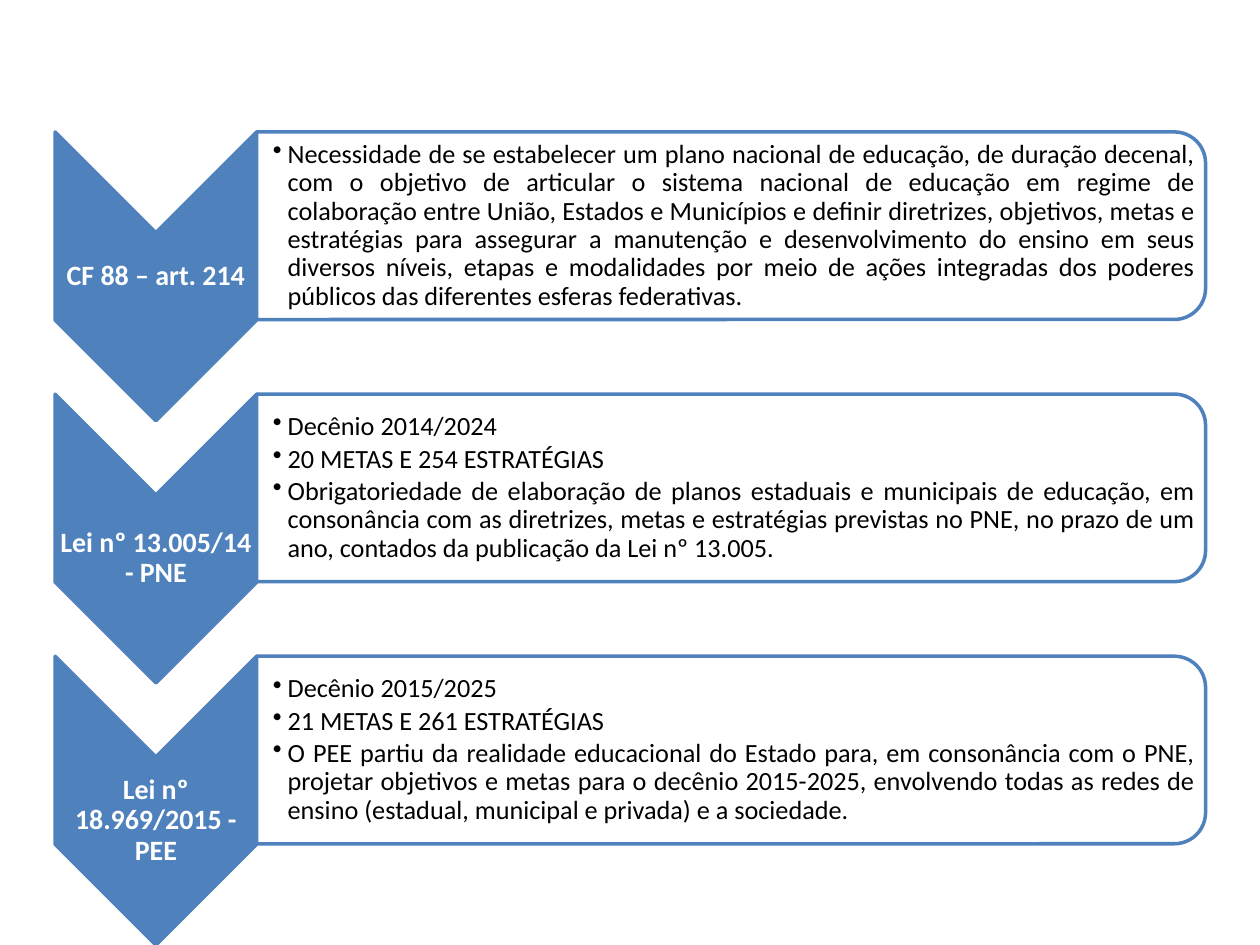
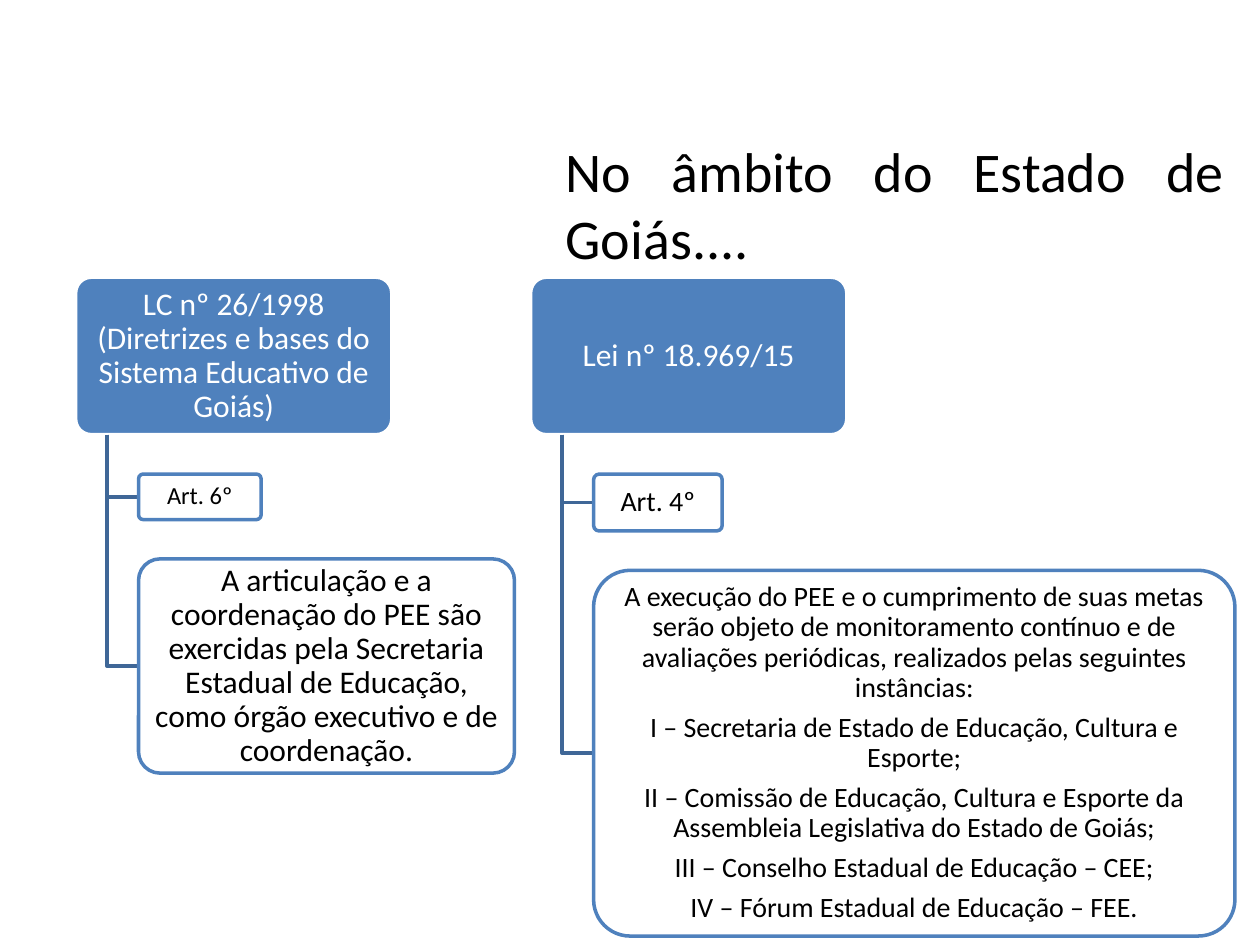
from dataclasses import dataclass

from lxml.etree import SubElement
from pptx import Presentation
from pptx.dml.color import RGBColor
from pptx.enum.shapes import MSO_SHAPE as Shape
from pptx.enum.text import MSO_ANCHOR as Anchor, MSO_AUTO_SIZE as AutoSize, PP_ALIGN as Align
from pptx.oxml.ns import qn
from pptx.util import Pt


@dataclass(frozen=True)
class Theme:
    font: str = "Calibri"
    blue: RGBColor = RGBColor(0x4F, 0x81, 0xBD)
    branch: RGBColor = RGBColor(0x3F, 0x67, 0x97)
    white: RGBColor = RGBColor(0xFF, 0xFF, 0xFF)
    black: RGBColor = RGBColor(0, 0, 0)
    line: float = 2
    title: float = 32
    card: float = 18
    label: float = 16
    bullet: float = 15
    small: float = 14


class Deck:
    TITLE_ONLY, BLANK = 5, 6

    def __init__(self, theme):
        self.theme = theme
        self.prs = Presentation()
        self.prs.slide_width, self.prs.slide_height = Pt(720), Pt(540)
        self.slide = None

    def new_slide(self, layout):
        self.slide = self.prs.slides.add_slide(self.prs.slide_layouts[layout])

    def title(self, text, x, y, w, h):
        title = self.slide.shapes.title
        title.left, title.top, title.width, title.height = Pt(x), Pt(y), Pt(w), Pt(h)
        frame = title.text_frame
        frame.text = text
        frame.auto_size = AutoSize.NONE
        frame.vertical_anchor = Anchor.TOP
        paragraph = frame.paragraphs[0]
        paragraph.alignment = Align.JUSTIFY
        self._font(paragraph, self.theme.title, self.theme.black)

    def _font(self, paragraph, size, color, bold=False):
        font = paragraph.font
        font.name, font.size, font.bold = self.theme.font, Pt(size), bold
        font.color.rgb = color

    def fill_text(self, shape, lines, size, color, bold=False, align=Align.CENTER,
                  after=0.35, insets=(2.5, 2), indent=0):
        """Fill a shape with paragraphs; a positive indent makes them bullets."""
        frame = shape.text_frame
        frame.word_wrap = True
        frame.vertical_anchor = Anchor.MIDDLE
        side, edge = insets
        frame.margin_left, frame.margin_right = Pt(side + indent), Pt(side)
        frame.margin_top = frame.margin_bottom = Pt(edge)
        for number, line in enumerate(lines):
            paragraph = frame.add_paragraph() if number else frame.paragraphs[0]
            paragraph.text = line
            paragraph.alignment = align
            paragraph.line_spacing = 0.9
            paragraph.space_after = Pt(size * after)
            if indent:
                props = paragraph._p.get_or_add_pPr()
                props.set("marL", str(Pt(indent)))
                props.set("indent", str(-Pt(indent)))
                SubElement(props, qn("a:buChar")).set("char", "•")
            self._font(paragraph, size, color, bold)

    def text_box(self, x, y, w, h, lines, size, color, **style):
        box = self.slide.shapes.add_textbox(Pt(x), Pt(y), Pt(w), Pt(h))
        self.fill_text(box, lines, size, color, **style)

    def _paint(self, shape, fill, line):
        shape.shadow.inherit = False
        shape.fill.solid()
        shape.fill.fore_color.rgb = fill
        shape.line.color.rgb = line
        shape.line.width = Pt(self.theme.line)

    def turned(self, kind, x, y, w, h, fill):
        """Draw a shape turned a quarter clockwise so that it covers the given box."""
        shape = self.slide.shapes.add_shape(
            kind, Pt(x + (w - h) / 2), Pt(y + (h - w) / 2), Pt(h), Pt(w))
        shape.rotation = 90
        self._paint(shape, fill, self.theme.blue)

    def rounded(self, x, y, w, h, lines, size, filled=False):
        theme = self.theme
        shape = self.slide.shapes.add_shape(
            Shape.ROUNDED_RECTANGLE, Pt(x), Pt(y), Pt(w), Pt(h))
        shape.adjustments[0] = 0.1
        if filled:
            self._paint(shape, theme.blue, theme.white)
        else:
            self._paint(shape, theme.white, theme.blue)
        self.fill_text(shape, lines, size, theme.white if filled else theme.black)

    def elbow(self, x, top, end_x, end_y):
        builder = self.slide.shapes.build_freeform(Pt(x), Pt(top))
        builder.add_line_segments([(Pt(x), Pt(end_y)), (Pt(end_x), Pt(end_y))], close=False)
        branch = builder.convert_to_shape()
        branch.shadow.inherit = False
        branch.fill.background()
        branch.line.color.rgb = self.theme.branch
        branch.line.width = Pt(self.theme.line)


LAWS = [
    ("CF 88 – art. 214", [
        "Necessidade de se estabelecer um plano nacional de educação, de duração decenal, "
        "com o objetivo de articular o sistema nacional de educação em regime de colaboração "
        "entre União, Estados e Municípios e definir diretrizes, objetivos, metas e estratégias "
        "para assegurar a manutenção e desenvolvimento do ensino em seus diversos níveis, etapas "
        "e modalidades por meio de ações integradas dos poderes públicos das diferentes esferas "
        "federativas."]),
    ("Lei nº 13.005/14 - PNE", [
        "Decênio 2014/2024",
        "20 METAS E 254 ESTRATÉGIAS",
        "Obrigatoriedade de elaboração de planos estaduais e municipais de educação, em "
        "consonância com as diretrizes, metas e estratégias previstas no PNE, no prazo de um "
        "ano, contados da publicação da Lei nº 13.005."]),
    ("Lei nº 18.969/2015 - PEE", [
        "Decênio 2015/2025",
        "21 METAS E 261 ESTRATÉGIAS",
        "O PEE partiu da realidade educacional do Estado para, em consonância com o PNE, "
        "projetar objetivos e metas para o decênio 2015-2025, envolvendo todas as redes de "
        "ensino (estadual, municipal e privada) e a sociedade."]),
]


def laws_slide(deck):
    theme = deck.theme
    deck.new_slide(deck.BLANK)
    left, top, pitch = 31.5, 75.4, 149.8
    chevron_w, chevron_h = 115.2, 165
    panel_x, panel_w, panel_h = left + chevron_w, 542.2, 107.2
    for row, (law, points) in enumerate(LAWS):
        y = top + row * pitch
        deck.turned(Shape.CHEVRON, left, y, chevron_w, chevron_h, theme.blue)
        label_drop = 11.5 if row else 0
        deck.text_box(left, y + 50 + label_drop, chevron_w, 65, [law], theme.label,
                      theme.white, bold=True, insets=(0.8, 0.8))
        deck.turned(Shape.ROUND_2_SAME_RECTANGLE, panel_x, y, panel_w, panel_h, theme.white)
        deck.text_box(panel_x, y + 5.2, panel_w - 5.2, 96.8, points, theme.bullet, theme.black,
                      align=Align.JUSTIFY, after=0.15, insets=(0.7, 0.7), indent=8.5)


def goias_slide(deck):
    theme = deck.theme
    deck.new_slide(deck.TITLE_ONLY)
    deck.title("No âmbito do Estado de Goiás....", 316, 74.2, 391, 79.2)
    # Each branch: heading, then its boxes as (width, height, size, lines)
    branches = [
        ("LC nº 26/1998 (Diretrizes e bases do Sistema Educativo de Goiás)", [
            (70, 26, theme.small, ["Art. 6º"]),
            (214.8, 122.4, theme.card, [
                "A articulação e a coordenação do PEE são exercidas pela Secretaria Estadual "
                "de Educação, como órgão executivo e de coordenação."]),
        ]),
        ("Lei nº 18.969/15", [
            (73.5, 32.5, theme.label, ["Art. 4º"]),
            (366.5, 209, theme.label, [
                "A execução do PEE e o cumprimento de suas metas serão objeto de monitoramento "
                "contínuo e de avaliações periódicas, realizados pelas seguintes instâncias:",
                "I – Secretaria de Estado de Educação, Cultura e Esporte;",
                "II – Comissão de Educação, Cultura e Esporte da Assembleia Legislativa do "
                "Estado de Goiás;",
                "III – Conselho Estadual de Educação – CEE;",
                "IV – Fórum Estadual de Educação – FEE."]),
        ]),
    ]
    left, top, pitch = 43.2, 158.4, 260
    card_w, card_h, gap, step = 180.7, 90, 22.5, 18
    for column, (heading, boxes) in enumerate(branches):
        x = left + column * pitch
        deck.rounded(x, top, card_w, card_h, [heading], theme.card, filled=True)
        y = top + card_h + gap
        for width, height, size, lines in boxes:
            deck.elbow(x + step, top + card_h, x + 2 * step, y + height / 2)
            deck.rounded(x + 2 * step, y, width, height, lines, size)
            y += height + gap


def main():
    deck = Deck(Theme())
    laws_slide(deck)
    goias_slide(deck)
    deck.prs.save("out.pptx")


if __name__ == "__main__":
    main()
